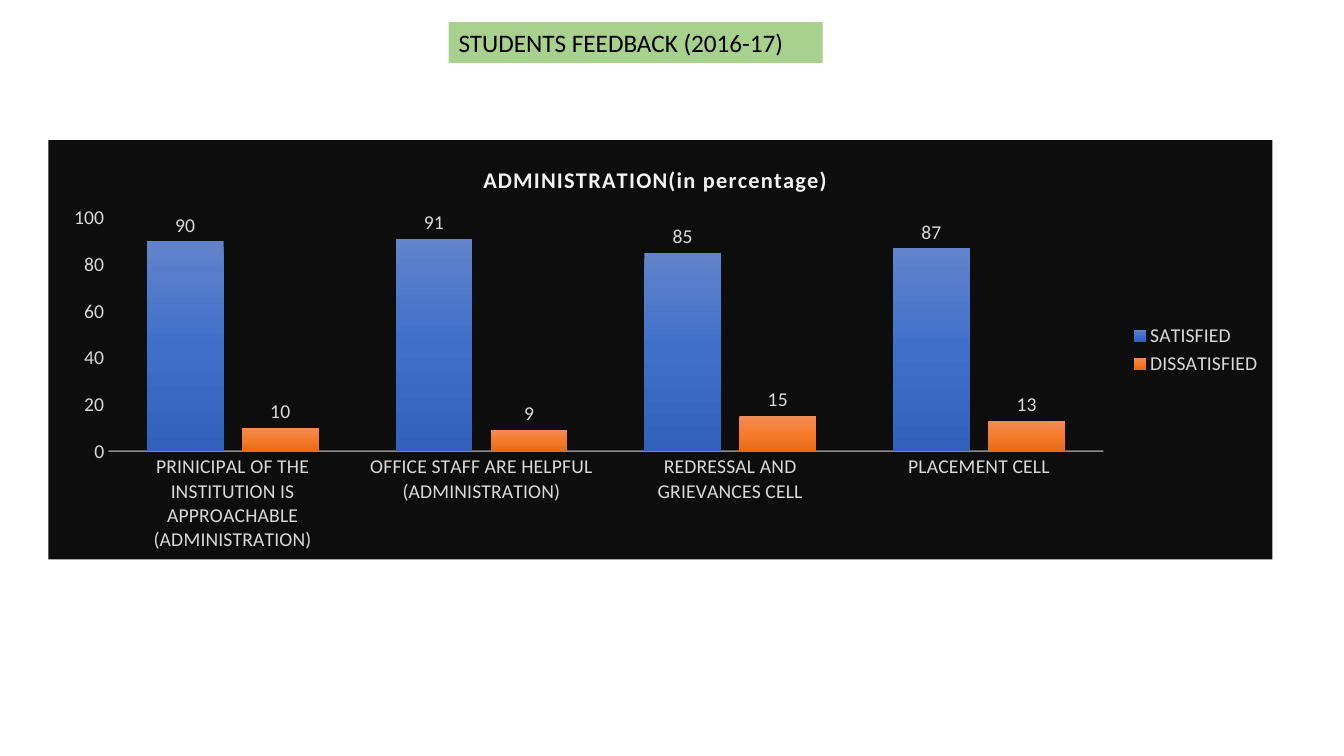
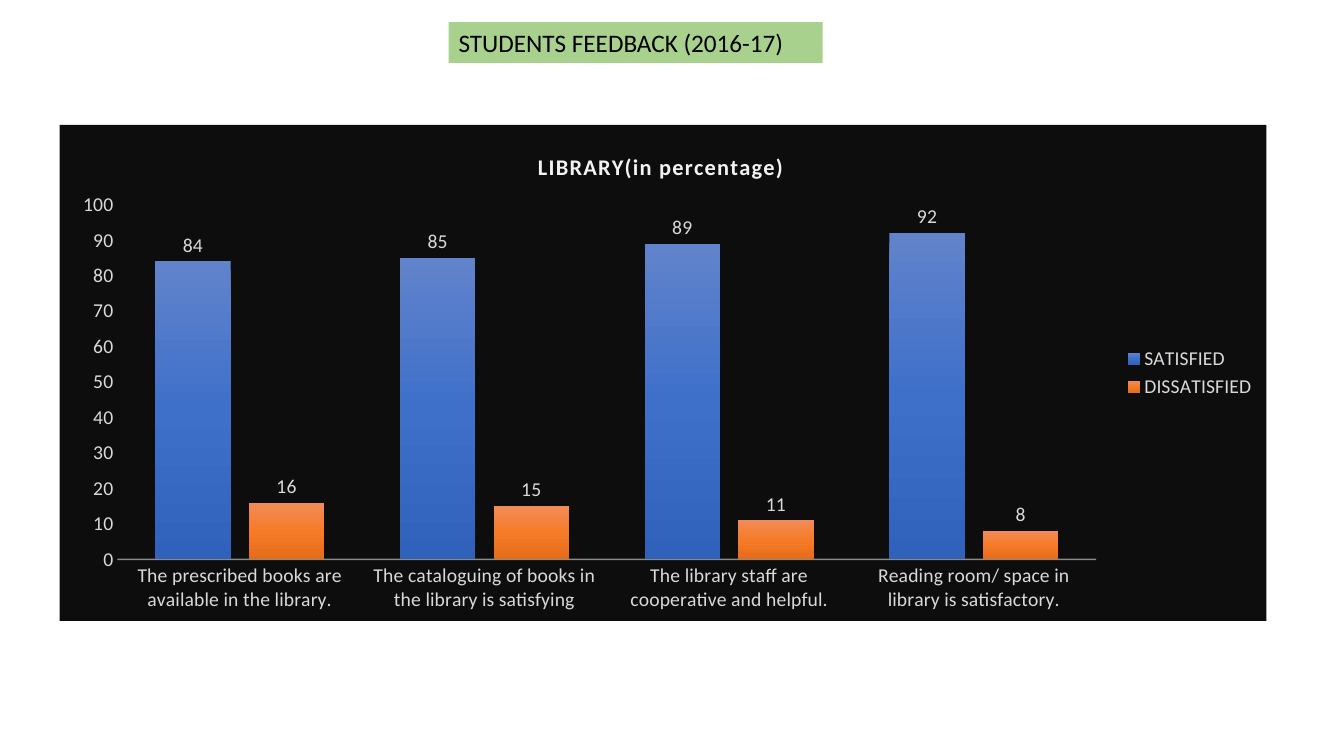
import pptx
import pptx.chart.data
import pptx.dml.color
import pptx.enum.chart
import pptx.enum.dml
import pptx.enum.shapes
import pptx.enum.text
import pptx.oxml
import pptx.oxml.ns
import pptx.util

COLORS = {
    "banner": "A9D18E",
    "ink": "000000",
    "panel": "0D0D0D",
    "title": "F2F2F2",
    "label": "D9D9D9",
    "axis": "F2F2F2",
}
GRADIENTS = {
    "SATISFIED": ((0, "6183CB"), (50, "3E70CA"), (100, "3062BB")),
    "DISSATISFIED": ((0, "F18C57"), (50, "F67B28"), (100, "E56C19")),
}
FONT = "Calibri"
SLIDE_SIZE = (pptx.util.Inches(13.33), pptx.util.Inches(7.5))
BANNER_BOX = (33.38, 2.93, 27.83, 5.4)
BANNER_TEXT = "STUDENTS FEEDBACK (2016-17)"
SURVEYS = (
    {
        "title": "ADMINISTRATION(in percentage)",
        "box": (3.6, 18.53, 91.07, 55.47),
        "title_at": (35.2, 5),
        "plot_at": (4.9, 18.6, 81.3, 55.6),
        "step": 20,
        "answers": (
            ("PRINICIPAL OF THE INSTITUTION IS APPROACHABLE (ADMINISTRATION)", 90, 10),
            ("OFFICE STAFF ARE HELPFUL (ADMINISTRATION)", 91, 9),
            ("REDRESSAL AND GRIEVANCES CELL", 85, 15),
            ("PLACEMENT CELL", 87, 13),
        ),
    },
    {
        "title": "LIBRARY(in percentage)",
        "box": (4.43, 16.53, 89.8, 65.6),
        "title_at": (39.3, 4.6),
        "plot_at": (4.8, 16.1, 81.1, 71.5),
        "step": 10,
        "answers": (
            ("The prescribed books are available in the library.", 84, 16),
            ("The cataloguing of books in the library is satisfying", 85, 15),
            ("The library staff are cooperative and helpful.", 89, 11),
            ("Reading room/ space in library is satisfactory.", 92, 8),
        ),
    },
)


def rgb(name):
    """Return the named palette colour."""
    return pptx.dml.color.RGBColor.from_string(COLORS[name])


def place(box):
    """Turn percentages of the slide into lengths."""
    return [round(share / 100 * SLIDE_SIZE[i % 2]) for i, share in enumerate(box)]


def style_font(font, size, color, bold=False):
    """Apply the deck typeface."""
    font.name = FONT
    font.size = pptx.util.Pt(size)
    font.bold = bold
    font.color.rgb = rgb(color)


def fill_xml(stops):
    """Build a vertical gradient fill element."""
    marks = "".join(
        f'<a:gs pos="{share * 1000}"><a:srgbClr val="{color}"/></a:gs>'
        for share, color in stops
    )
    return pptx.oxml.parse_xml(
        f'<a:gradFill {pptx.oxml.ns.nsdecls("a")} rotWithShape="1">'
        f'<a:gsLst>{marks}</a:gsLst><a:lin ang="5400000" scaled="0"/></a:gradFill>'
    )


def set_layout(element, index, shares, inner=False):
    """Fix a chart part at percentages of the chart area."""
    for old in element.findall(pptx.oxml.ns.qn("c:layout")):
        element.remove(old)
    target = '<c:layoutTarget val="inner"/>' if inner else ""
    modes = '<c:xMode val="edge"/><c:yMode val="edge"/>'
    values = "".join(
        f'<c:{key} val="{share / 100:.4f}"/>' for key, share in zip("xywh", shares)
    )
    element.insert(index, pptx.oxml.parse_xml(
        f'<c:layout {pptx.oxml.ns.nsdecls("c")}><c:manualLayout>'
        f"{target}{modes}{values}</c:manualLayout></c:layout>"
    ))


def add_banner(page):
    """Add the green heading band."""
    banner = page.shapes.add_shape(
        pptx.enum.shapes.MSO_SHAPE.RECTANGLE, *place(BANNER_BOX))
    banner.shadow.inherit = False
    banner.fill.solid()
    banner.fill.fore_color.rgb = rgb("banner")
    banner.line.fill.background()
    frame = banner.text_frame
    frame.word_wrap = True
    frame.auto_size = pptx.enum.text.MSO_AUTO_SIZE.SHAPE_TO_FIT_TEXT
    frame.vertical_anchor = pptx.enum.text.MSO_ANCHOR.TOP
    para = frame.paragraphs[0]
    para.alignment = pptx.enum.text.PP_ALIGN.LEFT
    span = para.add_run()
    span.text = BANNER_TEXT
    style_font(span.font, 18, "ink")


def style_panel(chart):
    """Paint the chart background."""
    panel = pptx.oxml.parse_xml(
        f'<c:spPr {pptx.oxml.ns.nsdecls("c", "a")}><a:solidFill>'
        f'<a:srgbClr val="{COLORS["panel"]}"/></a:solidFill>'
        "<a:ln><a:noFill/></a:ln></c:spPr>"
    )
    chart.element.find(pptx.oxml.ns.qn("c:chart")).addnext(panel)


def style_title(chart, survey):
    """Write and place the chart title."""
    chart.has_title = True
    title = chart.chart_title
    span = title.text_frame.paragraphs[0].add_run()
    span.text = survey["title"]
    style_font(span.font, 16, "title", bold=True)
    for properties in title.element.iter(pptx.oxml.ns.qn("a:rPr")):
        properties.set("spc", "100")
    set_layout(title.element, 1, survey["title_at"])


def style_axes(chart, step):
    """Format both axes and the plot's scale."""
    for axis in (chart.category_axis, chart.value_axis):
        axis.has_major_gridlines = False
        axis.major_tick_mark = pptx.enum.chart.XL_TICK_MARK.NONE
        axis.minor_tick_mark = pptx.enum.chart.XL_TICK_MARK.NONE
        style_font(axis.tick_labels.font, 14, "label")
    chart.value_axis.minimum_scale = 0
    chart.value_axis.maximum_scale = 100
    chart.value_axis.major_unit = step
    chart.value_axis.format.line.fill.background()
    line = chart.category_axis.format.line
    line.width = pptx.util.Pt(1)
    line.color.rgb = rgb("axis")
    for color in chart.element.xpath(".//c:catAx/c:spPr//a:srgbClr"):
        color.append(pptx.oxml.parse_xml(
            f'<a:alpha {pptx.oxml.ns.nsdecls("a")} val="54000"/>'))


def style_bars(chart):
    """Colour and label the two series."""
    plot = chart.plots[0]
    plot.gap_width = 100
    plot.overlap = -24
    plot.vary_by_categories = False
    for series, element in zip(plot.series, chart.element.xpath(".//c:ser")):
        series.invert_if_negative = False
        element.get_or_add_spPr().insert(0, fill_xml(GRADIENTS[series.name]))
        labels = series.data_labels
        labels.show_value = True
        labels.position = pptx.enum.chart.XL_LABEL_POSITION.OUTSIDE_END
        style_font(labels.font, 14, "label")


def add_survey_chart(page, survey):
    """Add one dark column chart of survey answers."""
    categories, *columns = zip(*survey["answers"])
    data = pptx.chart.data.CategoryChartData()
    data.categories = categories
    for name, values in zip(GRADIENTS, columns):
        data.add_series(name, values)
    chart = page.shapes.add_chart(
        pptx.enum.chart.XL_CHART_TYPE.COLUMN_CLUSTERED,
        *place(survey["box"]), data).chart
    style_font(chart.font, 14, "ink")
    style_panel(chart)
    style_title(chart, survey)
    style_axes(chart, survey["step"])
    style_bars(chart)
    chart.has_legend = True
    chart.legend.position = pptx.enum.chart.XL_LEGEND_POSITION.RIGHT
    chart.legend.include_in_layout = False
    style_font(chart.legend.font, 14, "label")
    plot_area = chart.element.xpath("c:chart/c:plotArea")[0]
    set_layout(plot_area, 0, survey["plot_at"], inner=True)


def main():
    """Build and save the deck."""
    deck = pptx.Presentation()
    deck.slide_width, deck.slide_height = SLIDE_SIZE
    for survey in SURVEYS:
        page = deck.slides.add_slide(deck.slide_layouts[6])
        add_survey_chart(page, survey)
        add_banner(page)
    deck.save("out.pptx")


if __name__ == "__main__":
    main()
